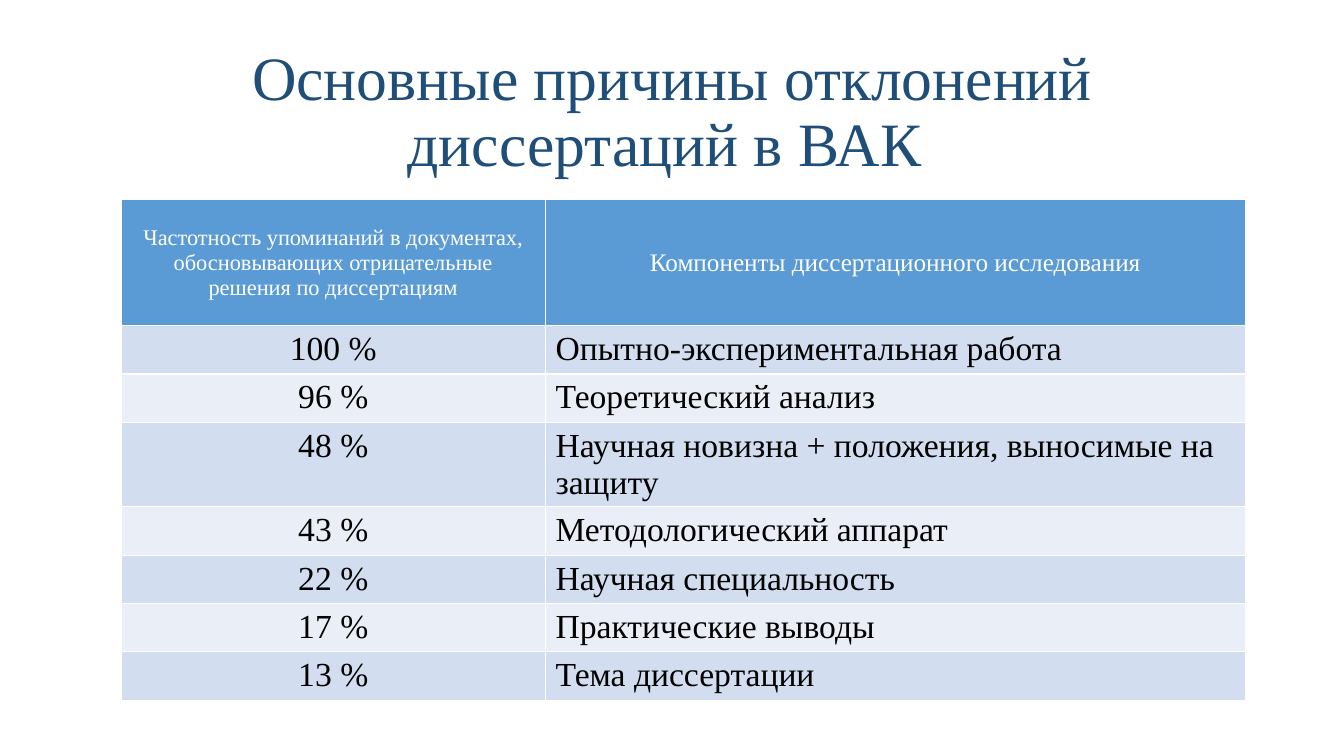
from pptx import Presentation
from pptx.dml.color import RGBColor
from pptx.enum.text import MSO_ANCHOR, MSO_AUTO_SIZE, PP_ALIGN
from pptx.util import Inches, Pt

CENTER, LEFT = PP_ALIGN.CENTER, PP_ALIGN.LEFT
TOP, MIDDLE = MSO_ANCHOR.TOP, MSO_ANCHOR.MIDDLE
NO_AUTOFIT = MSO_AUTO_SIZE.NONE
TITLE_ONLY_LAYOUT = 5

FONT = "Times New Roman"
NAVY = RGBColor(0x1F, 0x4E, 0x79)
HEADER_BLUE = RGBColor(0x5B, 0x9B, 0xD5)
BAND_COLORS = (RGBColor(0xD2, 0xDE, 0xEF), RGBColor(0xEA, 0xEF, 0xF7))
WHITE = RGBColor(0xFF, 0xFF, 0xFF)
BLACK = RGBColor(0x00, 0x00, 0x00)

TITLE = "Основные причины отклонений диссертаций в ВАК "
HEADERS = (
    ("Частотность упоминаний в документах, обосновывающих "
     "отрицательные решения по диссертациям", 16),
    ("Компоненты диссертационного исследования", 18),
)
REASONS = (
    ("100 %", "Опытно-экспериментальная работа"),
    ("96 %", "Теоретический анализ"),
    ("48 %", "Научная новизна + положения, выносимые на защиту"),
    ("43 %", "Методологический аппарат"),
    ("22 %", "Научная специальность"),
    ("17 %", "Практические выводы"),
    ("13 %", "Тема диссертации"),
)
COLUMN_WIDTHS = (4.21, 6.94)
HEADER_HEIGHT, ROW_HEIGHT = 1.25, 0.48


def format_paragraph(para, size, color, align):
    para.alignment = align
    para.font.name = FONT
    para.font.size = Pt(size)
    para.font.bold = False
    para.font.color.rgb = color


def fill_cell(cell, text, size, color, fill, align, anchor):
    cell.text = text
    cell.vertical_anchor = anchor
    cell.fill.solid()
    cell.fill.fore_color.rgb = fill
    format_paragraph(cell.text_frame.paragraphs[0], size, color, align)


def add_title(slide):
    title = slide.shapes.title
    title.left, title.top = Inches(0.92), Inches(0.4)
    title.width, title.height = Inches(11.5), Inches(1.45)
    frame = title.text_frame
    frame.text = TITLE
    frame.word_wrap = True
    frame.auto_size = NO_AUTOFIT
    frame.vertical_anchor = MIDDLE
    para = frame.paragraphs[0]
    para.line_spacing = 0.9
    format_paragraph(para, 44, NAVY, CENTER)


def add_reasons_table(slide):
    height = HEADER_HEIGHT + ROW_HEIGHT * len(REASONS)
    table = slide.shapes.add_table(
        len(REASONS) + 1, len(COLUMN_WIDTHS), Inches(1.2), Inches(1.98),
        Inches(sum(COLUMN_WIDTHS)), Inches(height)).table
    for column, width in zip(table.columns, COLUMN_WIDTHS):
        column.width = Inches(width)
    for index, row in enumerate(table.rows):
        row.height = Inches(ROW_HEIGHT if index else HEADER_HEIGHT)

    for column, (text, size) in enumerate(HEADERS):
        fill_cell(table.cell(0, column), text, size, WHITE, HEADER_BLUE,
                  CENTER, MIDDLE)
    for index, reason in enumerate(REASONS):
        band = BAND_COLORS[index % 2]
        for column, (text, align) in enumerate(zip(reason, (CENTER, LEFT))):
            fill_cell(table.cell(index + 1, column), text, 24, BLACK, band,
                      align, TOP)


def main():
    deck = Presentation()
    deck.slide_width, deck.slide_height = Inches(13.33), Inches(7.5)
    slide = deck.slides.add_slide(deck.slide_layouts[TITLE_ONLY_LAYOUT])
    add_title(slide)
    add_reasons_table(slide)
    deck.save("out.pptx")


if __name__ == "__main__":
    main()
